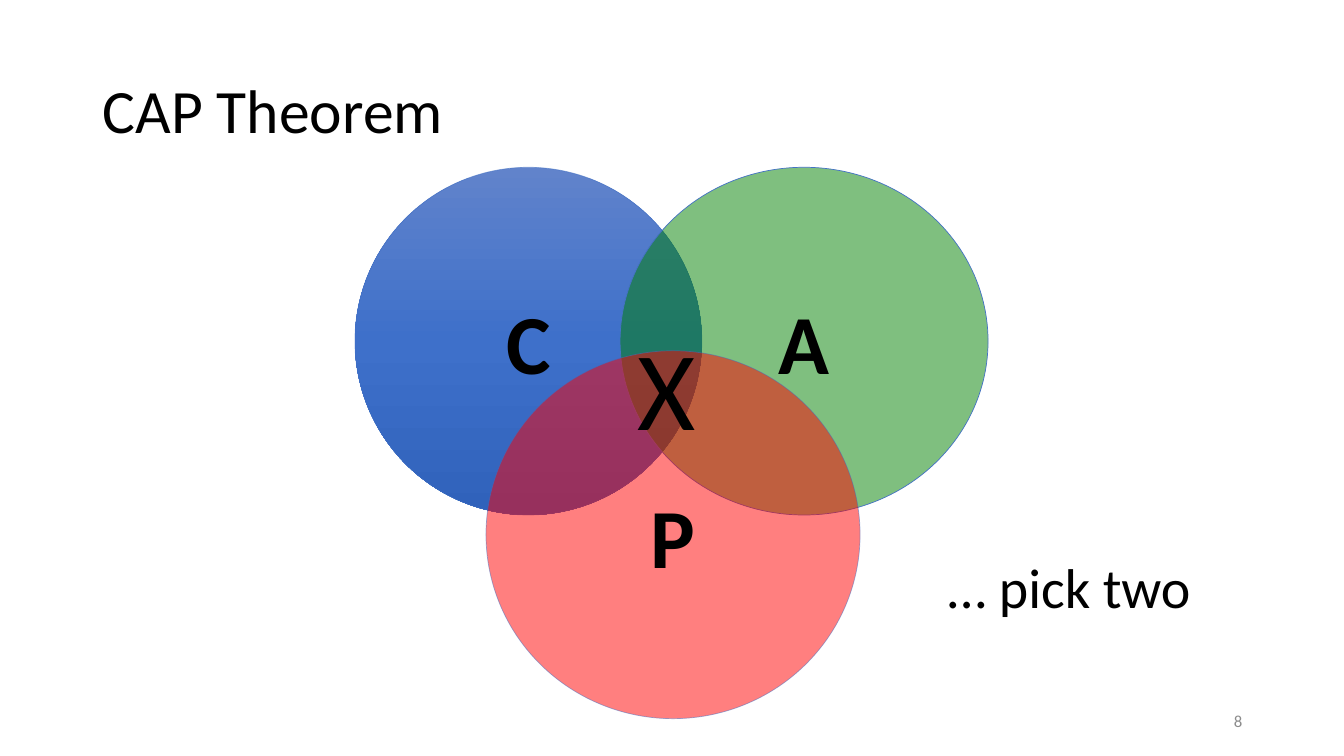
from copy import deepcopy
from pptx import Presentation, util as u
from pptx.dml.color import RGBColor
from pptx.enum import shapes, text
from pptx.oxml import ns
from lxml import etree

FONT = "Calibri"
HUES = {
    "ink": "000000", "gray": "8C8C8C", "green": "008000", "red": "FF0000",
    "edge": "3F6FC3", "rim": "4472C4",
    "top": "6183CB", "mid": "3E70CA", "low": "3062BB",
}
LEFT, MID, RIGHT = text.PP_ALIGN.LEFT, text.PP_ALIGN.CENTER, text.PP_ALIGN.RIGHT


def hue(name):
    return RGBColor.from_string(HUES[name])


def part(box, x, y, w, h):
    left, top, wide, high = box
    return (round(left + wide * x / 100), round(top + high * y / 100),
            round(wide * w / 100), round(high * h / 100))


def fade(fill, share):
    clr = fill._xPr.find(".//" + ns.qn("a:srgbClr"))
    etree.SubElement(clr, ns.qn("a:alpha"), val=str(share * 1000))


def blend(fill, names):
    fill.gradient()
    fill.gradient_angle = 270
    stops = fill._xPr.find(".//" + ns.qn("a:gsLst"))
    stops.insert(1, deepcopy(stops[0]))
    for i, (stop, name) in enumerate(zip(fill.gradient_stops, names)):
        stop.color.rgb = hue(name)
        stop.position = i / (len(names) - 1)


def write(shape, words, size, color="ink", align=LEFT, bold=False,
          anchor=text.MSO_ANCHOR.MIDDLE):
    frame = shape.text_frame
    frame.word_wrap = True
    frame.vertical_anchor = anchor
    para = frame.paragraphs[0]
    para.alignment = align
    run = para.add_run()
    run.text = words
    font = run.font
    font.name, font.size, font.bold = FONT, u.Pt(size), bold
    font.color.rgb = hue(color)
    return para


def label(slide, box, words, size, **style):
    write(slide.shapes.add_textbox(*box), words, size, **style)


def title(slide, box, words):
    head = slide.shapes.title
    head.left, head.top, head.width, head.height = box
    write(head, words, 44).line_spacing = 0.9


def disk(slide, box, words, color, edge, clear):
    oval = slide.shapes.add_shape(shapes.MSO_SHAPE.OVAL, *box)
    oval.shadow.inherit = False
    if color:
        oval.fill.solid()
        oval.fill.fore_color.rgb = hue(color)
        fade(oval.fill, 50)
    else:
        blend(oval.fill, ["top", "mid", "low"])
    oval.line.width = u.Pt(0.5)
    oval.line.color.rgb = hue(edge)
    if clear:
        fade(oval.line.fill, 50)
    write(oval, words, 60, align=MID, bold=True)


def venn(slide, box):
    disk(slide, part(box, 0, 0, 54.78, 63.07), "C", None, "edge", True)
    disk(slide, part(box, 41.88, 0, 58.12, 63.07), "A", "green", "rim", False)
    disk(slide, part(box, 20.7, 33.27, 59.08, 66.73), "P", "red", "edge", True)
    label(slide, part(box, 42.99, 26.51, 23.25, 26.51), "X", 80,
          anchor=text.MSO_ANCHOR.TOP)


def main():
    deck = Presentation()
    deck.slide_width, deck.slide_height = u.Inches(13.33), u.Inches(7.5)
    page = (0, 0, deck.slide_width, deck.slide_height)
    slide = deck.slides.add_slide(deck.slide_layouts[5])
    title(slide, part(page, 6.9, 5.33, 86.27, 19.33), "CAP Theorem")
    venn(slide, part(page, 26.41, 22.13, 47.11, 72.93))
    label(slide, part(page, 69.77, 72.4, 20.18, 10.27), "… pick two", 40,
          anchor=text.MSO_ANCHOR.TOP)
    label(slide, part(page, 70.67, 92.67, 22.5, 5.33), "8", 12,
          color="gray", align=RIGHT)
    deck.save("out.pptx")


if __name__ == "__main__":
    main()
